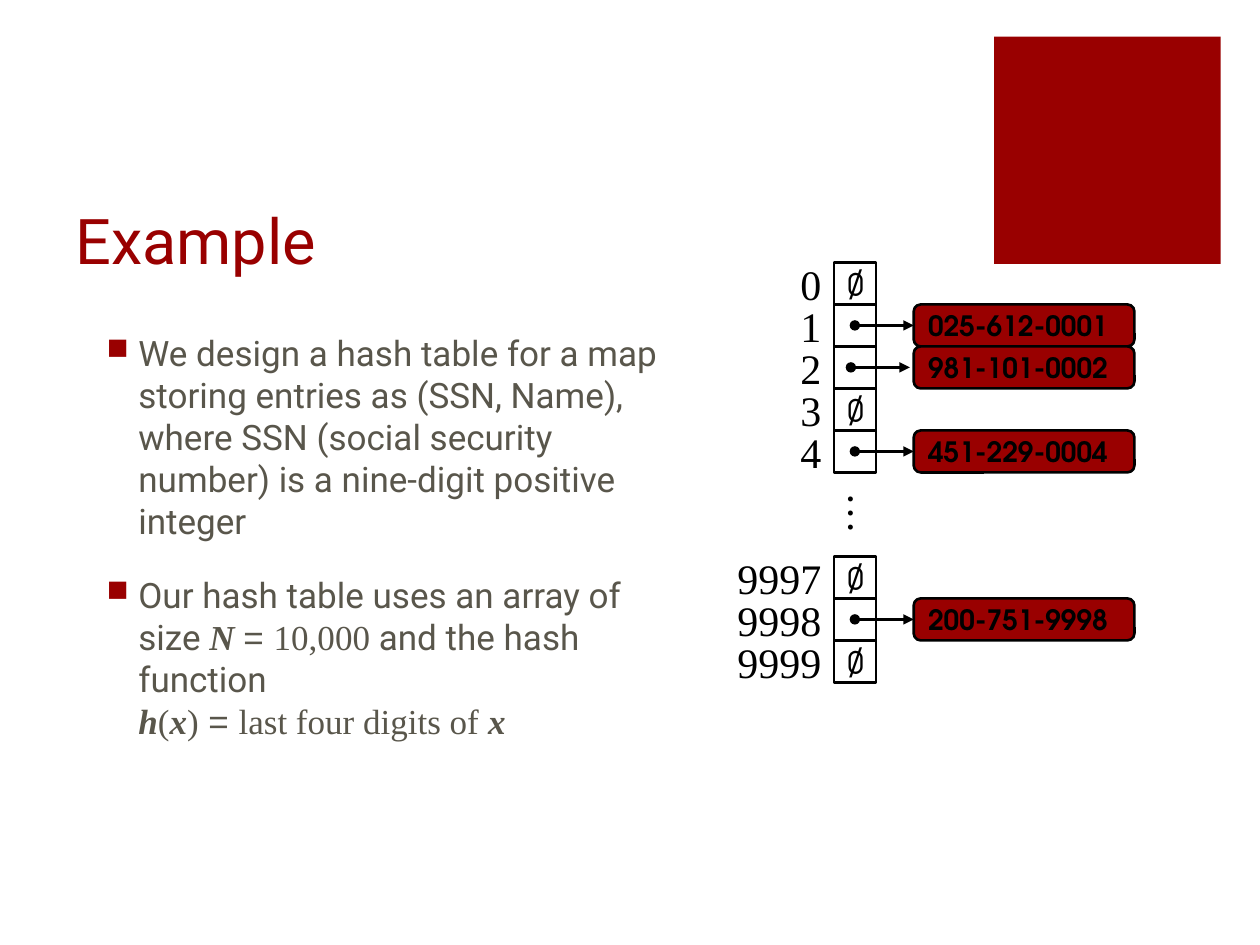
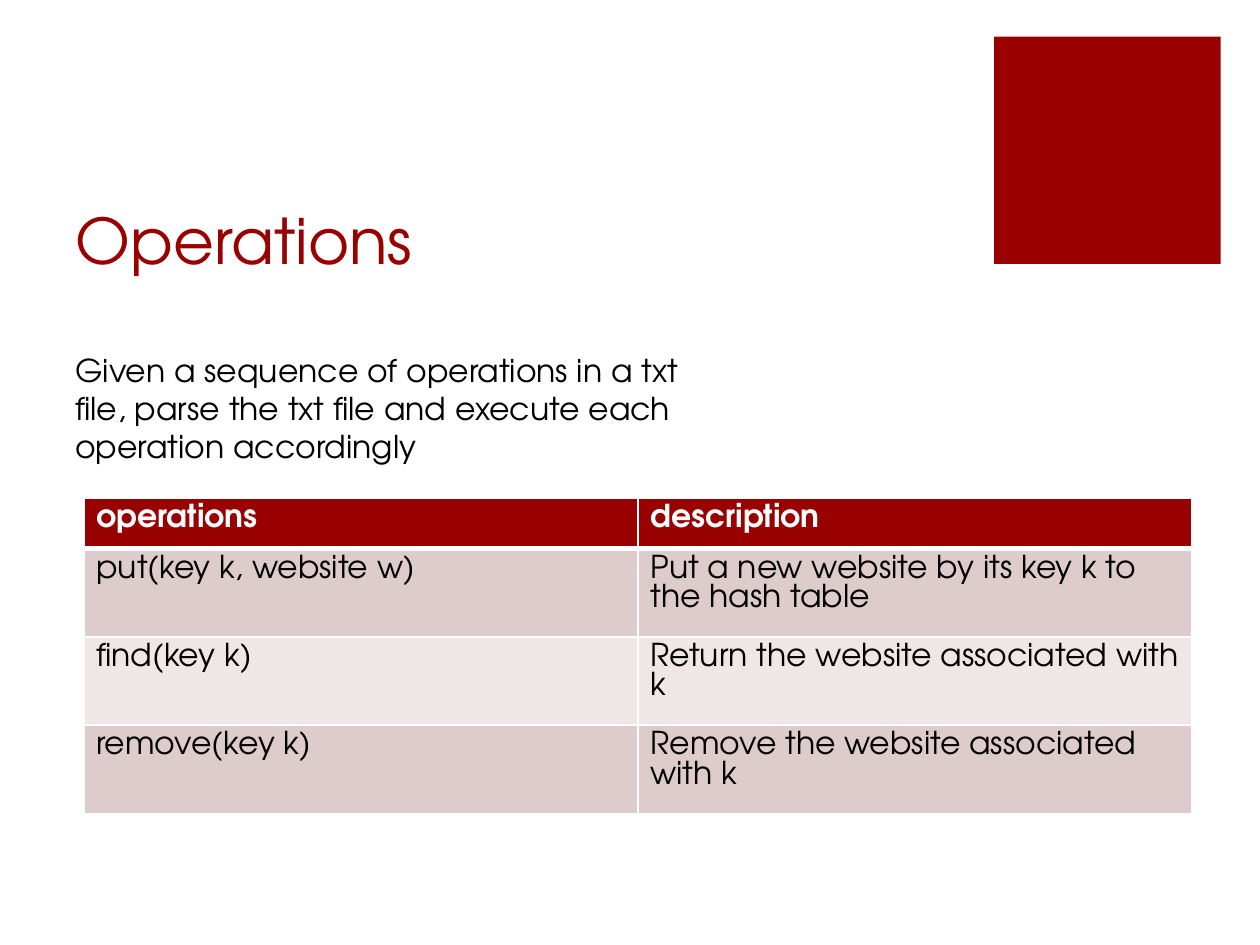
from dataclasses import dataclass

from lxml import etree
from pptx import Presentation
from pptx.dml.color import RGBColor
from pptx.enum.shapes import MSO_CONNECTOR, MSO_SHAPE
from pptx.enum.text import MSO_ANCHOR, PP_ALIGN
from pptx.oxml.ns import qn
from pptx.util import Cm, Pt

RECT = MSO_SHAPE.RECTANGLE
ROUND = MSO_SHAPE.ROUNDED_RECTANGLE
LINE = MSO_CONNECTOR.STRAIGHT
TOP, MIDDLE, BOTTOM = MSO_ANCHOR.TOP, MSO_ANCHOR.MIDDLE, MSO_ANCHOR.BOTTOM
LEFT, RIGHT = PP_ALIGN.LEFT, PP_ALIGN.RIGHT


@dataclass(frozen=True)
class Theme:
    red: str = "990000"
    olive: str = "59564B"
    black: str = "000000"
    white: str = "FFFFFF"
    dark: str = "DECCCC"
    light: str = "EFE7E7"
    sans: str = "Roboto"
    round: str = "TeX Gyre Adventor"
    serif: str = "Times New Roman"
    plain: str = "Arial"
    title: int = 36
    index: int = 24
    body: int = 20
    text: int = 18
    record: int = 16
    stroke: float = 1.5


@dataclass(frozen=True)
class Style:
    font: str
    size: int
    color: str
    bold: bool = False


@dataclass(frozen=True)
class Part:
    text: str
    font: str
    strong: bool = False


@dataclass(frozen=True)
class Slot:
    row: int
    label: str
    record: str = ""
    nudge: float = 0


THEME = Theme()
INDEX = Style(THEME.serif, THEME.index, THEME.black)
TEXT = Style(THEME.round, THEME.text, THEME.black)
HEAD = Style(THEME.round, THEME.text, THEME.white, True)
RECORD = Style(THEME.round, THEME.record, THEME.black, True)

SIDE = Cm(2.54) // 3
GRID_X, GRID_Y = Cm(16.81), Cm(5.29)
RECORD_X = Cm(18.42)

POINTS = [
    [Part("We design a hash table for a map storing entries as (SSN, Name), "
          "where SSN (social security number) is a nine-digit positive integer", THEME.sans)],
    [Part("Our hash table uses an array of size ", THEME.sans),
     Part("N ", THEME.serif, True),
     Part("= ", THEME.plain),
     Part("10,000", THEME.serif),
     Part(" and the hash function", THEME.sans),
     Part("\n", THEME.sans),
     Part("h", THEME.serif, True),
     Part("(", THEME.serif),
     Part("x", THEME.serif, True),
     Part(")", THEME.serif),
     Part(" = ", THEME.plain),
     Part("last four digits of ", THEME.serif),
     Part("x", THEME.serif, True)],
]

SLOTS = [
    Slot(0, "0"),
    Slot(1, "1", "025-612-0001"),
    Slot(2, "2", "981-101-0002", -0.08),
    Slot(3, "3"),
    Slot(4, "4", "451-229-0004"),
    Slot(7, "9997"),
    Slot(8, "9998", "200-751-9998"),
    Slot(9, "9999"),
]

ROWS = [
    ("operations", "description"),
    ("put(key k, website w)", "Put a new website by its key k to the hash table"),
    ("find(key k)", "Return the website associated with k"),
    ("remove(key k)", "Remove the website associated with k"),
]


def rgb(code: str) -> RGBColor:
    return RGBColor.from_string(code)


def set_font(font, style: Style) -> None:
    font.name = style.font
    font.size = Pt(style.size)
    font.bold = style.bold
    font.color.rgb = rgb(style.color)


def write(frame, text: str, style: Style, wrap: bool = True, align=LEFT, anchor=TOP) -> None:
    frame.word_wrap = wrap
    frame.vertical_anchor = anchor
    para = frame.paragraphs[0]
    para.text = text
    para.alignment = align
    set_font(para.font, style)


def add_text(slide, box: tuple, text: str, style: Style, **kind):
    shape = slide.shapes.add_textbox(*box)
    write(shape.text_frame, text, style, **kind)
    return shape


def add_box(slide, kind, box: tuple, fill: str = "", line: str = ""):
    shape = slide.shapes.add_shape(kind, *box)
    shape.shadow.inherit = False
    if fill:
        shape.fill.solid()
        shape.fill.fore_color.rgb = rgb(fill)
    else:
        shape.fill.background()
    if line:
        shape.line.color.rgb = rgb(line)
        shape.line.width = Pt(THEME.stroke)
    else:
        shape.line.fill.background()
    return shape


def add_arrow(slide, start: int, end: int, y: int) -> None:
    arrow = slide.shapes.add_connector(LINE, start, y, end, y)
    arrow.line.color.rgb = rgb(THEME.black)
    arrow.line.width = Pt(THEME.stroke)
    stroke = arrow.line._get_or_add_ln()
    etree.SubElement(stroke, qn("a:headEnd"), type="oval")
    etree.SubElement(stroke, qn("a:tailEnd"), type="triangle")
    etree.SubElement(arrow._element.spPr, qn("a:effectLst"))


def add_slide(deck, title: str, font: str):
    slide = deck.slides.add_slide(deck.slide_layouts[6])
    add_box(slide, RECT, (Cm(20.04), Cm(0.74), Cm(4.57), Cm(4.58)), THEME.red)
    add_text(slide, (Cm(1.27), Cm(2.54), Cm(18.08), Cm(3.18)), title,
             Style(font, THEME.title, THEME.red), anchor=BOTTOM)
    return slide


def add_points(slide) -> None:
    frame = slide.shapes.add_textbox(Cm(1.9), Cm(6.56), Cm(12.07), Cm(10.8)).text_frame
    frame.word_wrap = True
    for pos, parts in enumerate(POINTS):
        para = frame.add_paragraph() if pos else frame.paragraphs[0]
        para.space_before = Pt(18)
        props = para._p.get_or_add_pPr()
        props.set("marL", str(Cm(0.64)))
        props.set("indent", str(-Cm(0.64)))
        tint = etree.SubElement(props, qn("a:buClr"))
        etree.SubElement(tint, qn("a:srgbClr"), val=THEME.red)
        etree.SubElement(props, qn("a:buSzPct"), val="85000")
        etree.SubElement(props, qn("a:buChar"), char="■")
        set_font(para.font, Style(THEME.sans, THEME.body, THEME.olive))
        for part in parts:
            if part.text == "\n":
                para.add_line_break()
                continue
            run = para.add_run()
            run.text = part.text
            run.font.name = part.font
            if part.strong:
                run.font.bold = run.font.italic = True


def add_slot(slide, slot: Slot) -> None:
    y = GRID_Y + slot.row * SIDE
    cell = add_box(slide, RECT, (GRID_X, y, SIDE, SIDE), line=THEME.black)
    width = Cm(0.6 + 0.43 * len(slot.label))
    add_text(slide, (GRID_X - width, y - SIDE // 4, width, Cm(1.27)),
             slot.label, INDEX, wrap=False, align=RIGHT)
    if not slot.record:
        write(cell.text_frame, "∅", TEXT, False, LEFT, MIDDLE)
        return
    card = add_box(slide, ROUND, (RECORD_X, y, Cm(4.45), SIDE), THEME.red, THEME.black)
    write(card.text_frame, slot.record, RECORD, False, LEFT, MIDDLE)
    shift = Cm(slot.nudge)
    add_arrow(slide, GRID_X + SIDE // 2 + shift, RECORD_X + shift, y + SIDE // 2)


def add_edges(cell, head: bool) -> None:
    props = cell._tc.get_or_add_tcPr()
    for side in ("lnL", "lnR", "lnT", "lnB"):
        width = Pt(3 if head and side == "lnB" else 1)
        edge = etree.SubElement(props, qn(f"a:{side}"), w=str(width))
        fill = etree.SubElement(edge, qn("a:solidFill"))
        etree.SubElement(fill, qn("a:srgbClr"), val=THEME.white)


def add_grid(slide) -> None:
    table = slide.shapes.add_table(len(ROWS), 2, Cm(1.69), Cm(10.04), Cm(22.34), Cm(6.36)).table
    for row, texts in enumerate(ROWS):
        head = row == 0
        table.rows[row].height = Cm(1.02 if head else 1.78)
        fill = THEME.red if head else (THEME.light, THEME.dark)[row % 2]
        for col, text in enumerate(texts):
            cell = table.cell(row, col)
            add_edges(cell, head)
            cell.fill.solid()
            cell.fill.fore_color.rgb = rgb(fill)
            write(cell.text_frame, text, HEAD if head else TEXT)


def main() -> None:
    deck = Presentation()
    deck.slide_width, deck.slide_height = Cm(25.4), Cm(19.05)

    slide = add_slide(deck, "Example", THEME.sans)
    add_points(slide)
    for slot in SLOTS:
        add_slot(slide, slot)
    dots = add_text(slide, (Cm(16.77), Cm(9.72), Cm(1.35), Cm(1.27)), "…", INDEX, wrap=False)
    dots.rotation = 90

    slide = add_slide(deck, "Operations", THEME.round)
    add_text(slide, (Cm(1.27), Cm(6.96), Cm(12.7), Cm(2.57)),
             "Given a sequence of operations in a txt file, parse the txt file "
             "and execute each operation accordingly", TEXT)
    add_grid(slide)

    deck.save("out.pptx")


if __name__ == "__main__":
    main()
